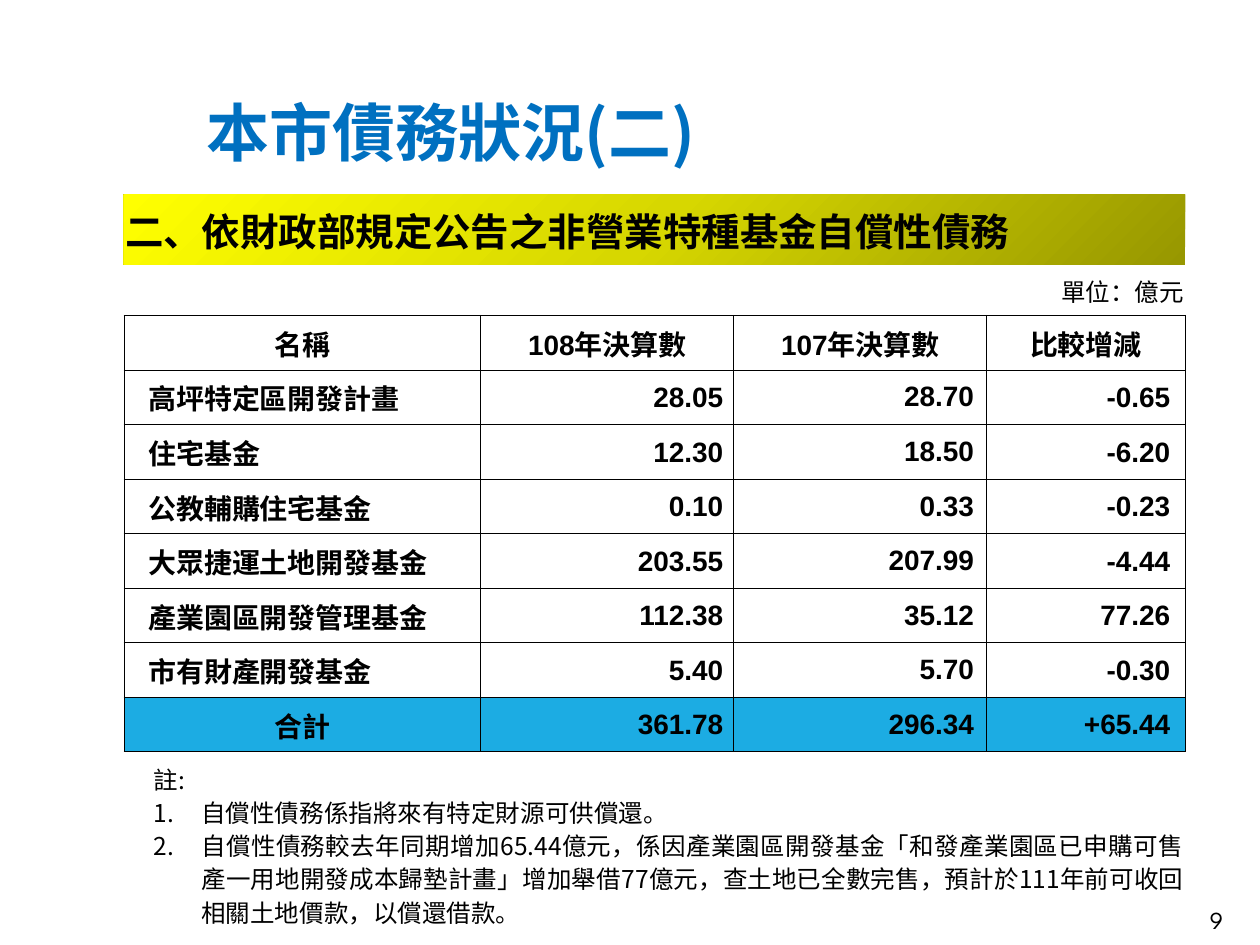
from lxml.etree import SubElement
from pptx import Presentation
from pptx.dml.color import RGBColor
from pptx.enum.text import MSO_ANCHOR, PP_ALIGN
from pptx.oxml import parse_xml
from pptx.oxml.ns import nsdecls, qn
from pptx.util import Pt

CJK = "Noto Sans CJK SC"
LEFT, CENTER, RIGHT = PP_ALIGN.LEFT, PP_ALIGN.CENTER, PP_ALIGN.RIGHT
NO_TABLE_STYLE = "{2D5ABB26-0587-4C30-8999-92F81FD0307C}"

FUNDS = [
    ("高坪特定區開發計畫", "28.05", "28.70", "-0.65"),
    ("住宅基金", "12.30", "18.50", "-6.20"),
    ("公教輔購住宅基金", "0.10", "0.33", "-0.23"),
    ("大眾捷運土地開發基金", "203.55", "207.99", "-4.44"),
    ("產業園區開發管理基金", "112.38", "35.12", "77.26"),
    ("市有財產開發基金", "5.40", "5.70", "-0.30"),
]
TOTAL = ("合計", "361.78", "296.34", "+65.44")
HEADINGS = ("名稱", "108年決算數", "107年決算數", "比較增減")
NOTES = [
    "自償性債務係指將來有特定財源可供償還。",
    "自償性債務較去年同期增加65.44億元，係因產業園區開發基金「和發產業園區已申購可售產一用地開發成本歸墊計畫」"
    "增加舉借77億元，查土地已全數完售，預計於111年前可收回相關土地價款，以償還借款。",
]


def color(hex_value):
    return RGBColor.from_string(hex_value)


def apply(target, values):
    for name, value in values.items():
        setattr(target, name, value)


class DebtSlide:
    def __init__(self, deck):
        self.slide = deck.slides.add_slide(deck.slide_layouts[6])
        background = self.slide.background.fill
        background.solid()
        background.fore_color.rgb = color("FFFFFF")

    def add_text(self, paragraph, text, size, font=CJK, ink="000000", bold=False, **layout):
        apply(paragraph, layout)
        run = paragraph.add_run()
        run.text = text
        apply(run.font, {"size": Pt(size), "bold": bold, "name": font})
        run.font.color.rgb = color(ink)
        SubElement(run.font._element, qn("a:ea"), typeface=CJK)

    def text_box(self, left, top, width, height, anchor=MSO_ANCHOR.TOP):
        box = self.slide.shapes.add_textbox(Pt(left), Pt(top), Pt(width), Pt(height))
        apply(box.text_frame, {"word_wrap": True, "vertical_anchor": anchor})
        return box.text_frame

    def note(self, paragraph, text, indent, hanging, numbered=False):
        self.add_text(paragraph, text, 14, alignment=PP_ALIGN.JUSTIFY, line_spacing=Pt(19))
        properties = paragraph._p.get_or_add_pPr()
        properties.set("marL", str(Pt(indent)))
        properties.set("indent", str(Pt(-hanging)))
        if numbered:
            SubElement(properties, qn("a:buAutoNum"), type="arabicPeriod")

    def table(self, left, top, widths, heights):
        frame = self.slide.shapes.add_table(
            len(heights), len(widths), Pt(left), Pt(top), Pt(sum(widths)), Pt(sum(heights)))
        grid = frame.table
        apply(grid, {"first_row": False, "horz_banding": False})
        grid._tbl.tblPr.find(qn("a:tableStyleId")).text = NO_TABLE_STYLE
        for column, width in zip(grid.columns, widths):
            column.width = Pt(width)
        for row, height in zip(grid.rows, heights):
            row.height = Pt(height)
        return grid

    def cell(self, cell, text, size=16, font="Arial", bold=True, align=LEFT,
             margins=(0.7, 0.7, 0.7, 0), fill="FFFFFF", borders="LRTB"):
        sides = ("margin_left", "margin_top", "margin_right", "margin_bottom")
        apply(cell, dict(zip(sides, map(Pt, margins))))
        cell.vertical_anchor = MSO_ANCHOR.MIDDLE
        self.border(cell, borders)
        if fill:
            cell.fill.solid()
            cell.fill.fore_color.rgb = color(fill)
        if text:
            self.add_text(cell.text_frame.paragraphs[0], text, size, font, bold=bold, alignment=align)

    def border(self, cell, sides):
        for side in sides:
            cell._tc.get_or_add_tcPr().append(parse_xml(
                f'<a:ln{side} {nsdecls("a")} w="{Pt(0.5)}"><a:solidFill>'
                f'<a:srgbClr val="000000"/></a:solidFill></a:ln{side}>'))

    def gradient(self, cell, stops, angle):
        stop_list = "".join(f'<a:gs pos="{position * 1000}"><a:srgbClr val="{shade}"/></a:gs>'
                            for position, shade in stops)
        cell._tc.get_or_add_tcPr().append(parse_xml(
            f'<a:gradFill {nsdecls("a")} rotWithShape="1"><a:gsLst>{stop_list}</a:gsLst>'
            f'<a:lin ang="{angle * 60000}" scaled="0"/></a:gradFill>'))


def main():
    deck = Presentation()
    apply(deck, {"slide_width": Pt(720), "slide_height": Pt(540)})
    page = DebtSlide(deck)

    # Title
    title = page.text_box(111, 49, 468, 57, MSO_ANCHOR.MIDDLE)
    page.add_text(title.paragraphs[0], "本市債務狀況(二)", 36, ink="0070C0", bold=True, line_spacing=0.9)

    # Table: section band and unit line
    debts = page.table(70.8, 111.2, [204, 144.5, 144.5, 113.5], [40, 29] + [31.2] * 8)
    band, unit = debts.cell(0, 0), debts.cell(1, 1)
    band.merge(debts.cell(0, 3))
    unit.merge(debts.cell(1, 3))
    page.cell(band, "二、依財政部規定公告之非營業特種基金自償性債務", 22, CJK, fill=None, borders="")
    page.gradient(band, [(0, "979700"), (50, "D7D700"), (100, "FFFF00")], 225)
    page.cell(debts.cell(1, 0), "", borders="B")
    page.cell(unit, "單位：億元", 14, CJK, bold=False, align=RIGHT, borders="B")

    # Table: headings, funds and total
    for col, heading in enumerate(HEADINGS):
        page.cell(debts.cell(2, col), heading, align=CENTER)
    amount_margins = [(0.7, 0.7, 6, 0), (7.2, 3.6, 7.2, 3.6), (0.7, 0.7, 8.6, 0)]
    for row, (fund, *amounts) in enumerate(FUNDS + [TOTAL], start=3):
        if fund == TOTAL[0]:
            fill = "1CACE3"
            page.cell(debts.cell(row, 0), fund, align=CENTER, fill=fill)
        else:
            fill = "FFFFFF"
            page.cell(debts.cell(row, 0), fund, margins=(14, 0.7, 0.7, 0), fill=fill)
        for col, (amount, margins) in enumerate(zip(amounts, amount_margins), start=1):
            page.cell(debts.cell(row, col), amount, align=RIGHT, margins=margins, fill=fill)

    # Notes
    notes = page.text_box(36.7, 431.3, 646.6, 101.5)
    page.note(notes.paragraphs[0], "註:", 56, 12)
    for text in NOTES:
        page.note(notes.add_paragraph(), text, 71.3, 27.3, numbered=True)

    # Page number
    number = page.text_box(660, 511, 46, 29, MSO_ANCHOR.MIDDLE)
    page.add_text(number.paragraphs[0], "9", 14, "League Spartan", alignment=RIGHT)

    deck.save("out.pptx")


if __name__ == "__main__":
    main()
